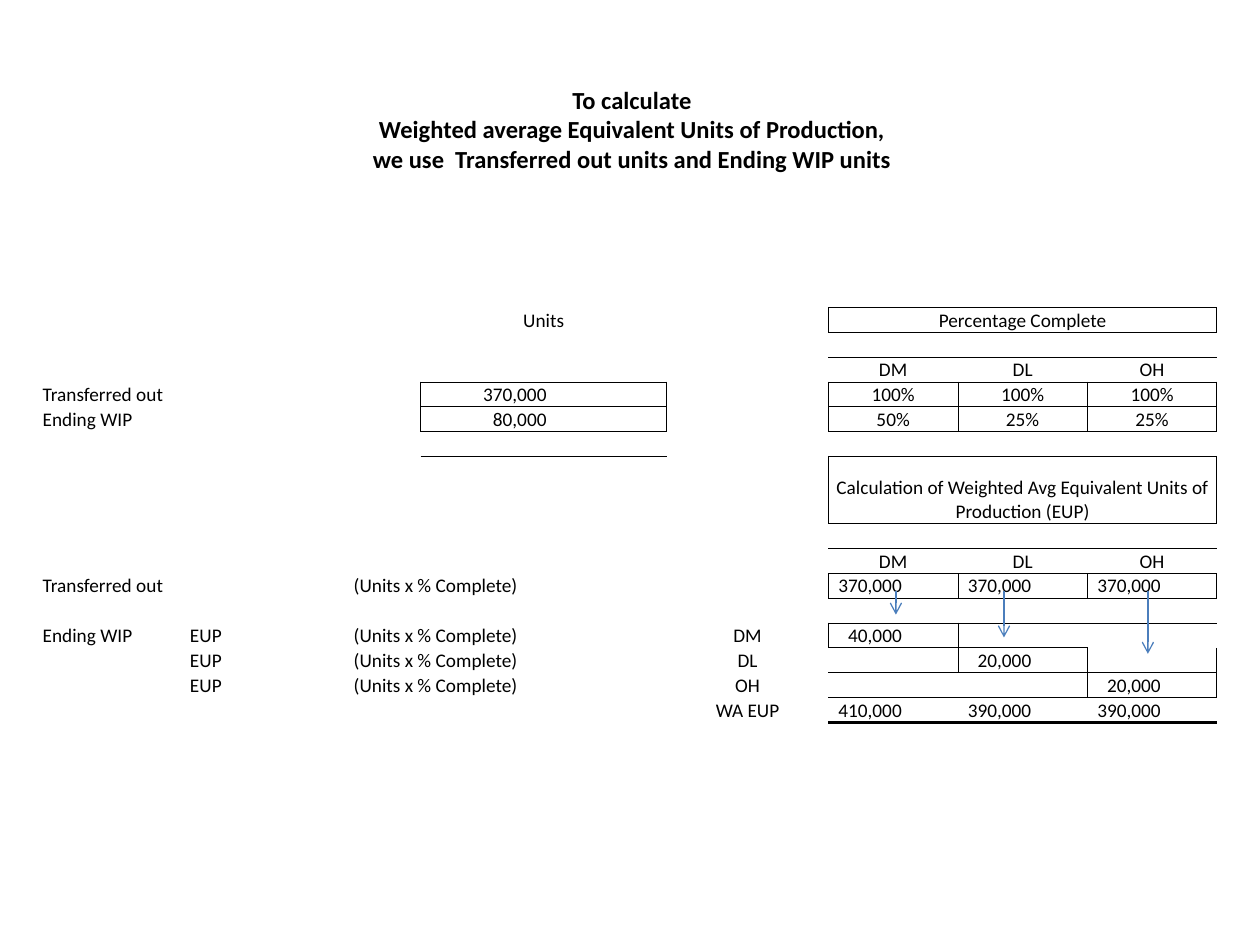
from collections import defaultdict
from dataclasses import dataclass

from lxml import etree
from pptx import Presentation
from pptx.dml.color import RGBColor
from pptx.enum.shapes import MSO_CONNECTOR
from pptx.enum.text import MSO_ANCHOR, MSO_AUTO_SIZE, PP_ALIGN
from pptx.oxml.ns import qn
from pptx.util import Cm, Pt

LEFT, CENTER, RIGHT = PP_ALIGN.LEFT, PP_ALIGN.CENTER, PP_ALIGN.RIGHT
TITLE_ONLY = 5
NO_STYLE = "{2D5ABB26-0587-4C30-8999-92F81FD0307C}"


@dataclass(frozen=True)
class Theme:
    font: str = "Calibri"
    ink: str = "000000"
    arrow: str = "4B7EBC"
    title_size: int = 14
    table_size: int = 11
    thin: float = 0.5
    arrow_width: float = 0.75
    thick: float = 2


THEME = Theme()

# Table grid, in centimetres
COLUMNS = [6.27, 1.37, 4.96, 3.26, 2.61, 2.61, 2.61]
ROW_HEIGHT, HEADING_HEIGHT = 0.49, 1.36
ROW_COUNT, HEADING_ROW, TOTAL_ROW = 15, 6, 14
UNITS, LABEL, FIRST_COST = 2, 3, 4
COST_NAMES = ["DM", "DL", "OH"]
EUP_TAB = 2.97
UNITS_INSET, COST_INSET = 2.42, 1.13

# Opposite side and step to the neighbour, in the order the file format wants
SIDES = {"L": ("R", 0, -1), "R": ("L", 0, 1), "T": ("B", -1, 0), "B": ("T", 1, 0)}


def style_runs(para, size, bold=False):
    for span in para.runs:
        span.font.name = THEME.font
        span.font.size = Pt(size)
        span.font.bold = bold
        span.font.color.rgb = RGBColor.from_string(THEME.ink)


def add_title(page, left, top, width, height):
    title = page.shapes.title
    title.left, title.top, title.width, title.height = map(Cm, (left, top, width, height))
    frame = title.text_frame
    frame.word_wrap = True
    frame.auto_size = MSO_AUTO_SIZE.NONE
    frame.vertical_anchor = MSO_ANCHOR.MIDDLE
    para = frame.paragraphs[0]
    para.text = ("To calculate\vWeighted average Equivalent Units of Production,\v"
                 "we use  Transferred out units and Ending WIP units")
    para.alignment = CENTER
    style_runs(para, THEME.title_size, bold=True)


def table_texts():
    """Map (row, column) to text, alignment and right inset."""
    texts = {
        (0, UNITS): ("Units", CENTER, 0.02),
        (0, FIRST_COST): ("Percentage Complete", CENTER, 0.02),
        (3, UNITS): ("370,000", RIGHT, UNITS_INSET),
        (4, UNITS): ("80,000", RIGHT, UNITS_INSET),
        (HEADING_ROW, FIRST_COST): (
            "Calculation of Weighted Avg Equivalent Units of Production (EUP)", CENTER, 0.02),
        (TOTAL_ROW, LABEL): ("WA EUP", CENTER, 0.02),
    }
    row_names = {3: "Transferred out", 4: "Ending WIP", 9: "Transferred out",
                 11: "Ending WIP\tEUP", 12: "\tEUP", 13: "\tEUP"}
    for row, name in row_names.items():
        texts[row, 0] = (name, LEFT, 0.02)
        if row >= 9:
            texts[row, 1] = ("(Units x % Complete)", LEFT, 0.02)

    cost_rows = {2: COST_NAMES, 3: ["100%"] * 3, 4: ["50%", "25%", "25%"],
                 8: COST_NAMES, 9: ["370,000"] * 3,
                 TOTAL_ROW: ["410,000", "390,000", "390,000"]}
    for row, values in cost_rows.items():
        align, inset = (RIGHT, COST_INSET) if row >= 9 else (CENTER, 0.02)
        for column, value in enumerate(values, FIRST_COST):
            texts[row, column] = (value, align, inset)

    # Ending WIP steps down one row per cost
    for step, value in enumerate(["40,000", "20,000", "20,000"]):
        texts[11 + step, LABEL] = (COST_NAMES[step], CENTER, 0.02)
        texts[11 + step, FIRST_COST + step] = (value, RIGHT, COST_INSET)
    return texts


def table_borders():
    """Map each cell to its side widths; neighbours share an edge."""
    borders = defaultdict(dict)

    def frame(row, column, span=1, widths=None):
        for side, (opposite, down, across) in SIDES.items():
            width = (widths or dict.fromkeys(SIDES, THEME.thin)).get(side)
            if width is None:
                continue
            borders[row, column][side] = width
            if side in "LR":
                reach = column + (span if side == "R" else across)
                borders[row, reach][opposite] = width
            else:
                for place in range(column, column + span):
                    borders[row + down, place][opposite] = width

    for row in (0, HEADING_ROW):
        frame(row, FIRST_COST, span=3)
    for row in (3, 4):
        frame(row, UNITS)
    for step in range(3):
        for row in (3, 4, 9, 11 + step):
            frame(row, FIRST_COST + step)
        frame(TOTAL_ROW, FIRST_COST + step, widths={"T": THEME.thin, "B": THEME.thick})
    return borders


def draw_borders(cell, widths):
    properties = cell._tc.get_or_add_tcPr()
    sides = [side for side in SIDES if side in widths]
    for place, side in enumerate(sides):
        line = etree.Element(qn(f"a:ln{side}"), w=str(Pt(widths[side])))
        fill = etree.SubElement(line, qn("a:solidFill"))
        etree.SubElement(fill, qn("a:srgbClr"), val=THEME.ink)
        properties.insert(place, line)


def fill_cell(cell, text, align, inset):
    cell.fill.background()
    cell.margin_left, cell.margin_top, cell.margin_bottom = Cm(0.02), Cm(0.02), 0
    cell.margin_right = Cm(inset)
    cell.vertical_anchor = MSO_ANCHOR.BOTTOM
    para = cell.text_frame.paragraphs[0]
    para.text = text
    para.alignment = align
    style_runs(para, THEME.table_size)
    if "\t" in text:
        stops = etree.SubElement(para._p.get_or_add_pPr(), qn("a:tabLst"))
        etree.SubElement(stops, qn("a:tab"), pos=str(Cm(EUP_TAB)), algn="l")
    if not text:  # keeps empty rows as low as the filled ones
        etree.SubElement(para._p, qn("a:endParaRPr"), sz=str(THEME.table_size * 100))


def add_units_table(page, left, top):
    height = ROW_HEIGHT * (ROW_COUNT - 1) + HEADING_HEIGHT
    table = page.shapes.add_table(ROW_COUNT, len(COLUMNS), Cm(left), Cm(top),
                                  Cm(sum(COLUMNS)), Cm(height)).table
    table.first_row = table.horz_banding = False
    table._tbl.tblPr.find(qn("a:tableStyleId")).text = NO_STYLE
    for column, width in zip(table.columns, COLUMNS):
        column.width = Cm(width)
    for number, row in enumerate(table.rows):
        row.height = Cm(HEADING_HEIGHT if number == HEADING_ROW else ROW_HEIGHT)

    texts, borders = table_texts(), table_borders()
    for row in range(ROW_COUNT):
        for column in range(len(COLUMNS)):
            cell = table.cell(row, column)
            fill_cell(cell, *texts.get((row, column), ("", LEFT, 0.02)))
            draw_borders(cell, borders[row, column])

    merges = [(0, 4, 6), (HEADING_ROW, 4, 6), (9, 1, 3), (11, 1, 2), (12, 1, 2), (13, 1, 2)]
    for row, first, last in merges:
        table.cell(row, first).merge(table.cell(row, last))


def add_arrows(page, left, top):
    # Each arrow drops from transferred-out units towards the ending WIP
    for across, length in [(17.22, 0.48), (19.4, 0.94), (22.3, 1.27)]:
        x, y = Cm(left + across), top + 5.71
        arrow = page.shapes.add_connector(MSO_CONNECTOR.STRAIGHT, x, Cm(y), x, Cm(y + length))
        arrow.line.color.rgb = RGBColor.from_string(THEME.arrow)
        arrow.line.width = Pt(THEME.arrow_width)
        etree.SubElement(arrow.line._get_or_add_ln(), qn("a:tailEnd"), type="arrow")
        etree.SubElement(arrow._element.spPr, qn("a:effectLst"))


def main():
    deck = Presentation()
    deck.slide_width, deck.slide_height = Cm(25.4), Cm(19.05)
    page = deck.slides.add_slide(deck.slide_layouts[TITLE_ONLY])
    add_title(page, 1.27, 1.07, 22.94, 3.07)
    add_units_table(page, 0.84, 6.2)
    add_arrows(page, 0.84, 6.2)
    deck.save("out.pptx")


if __name__ == "__main__":
    main()
